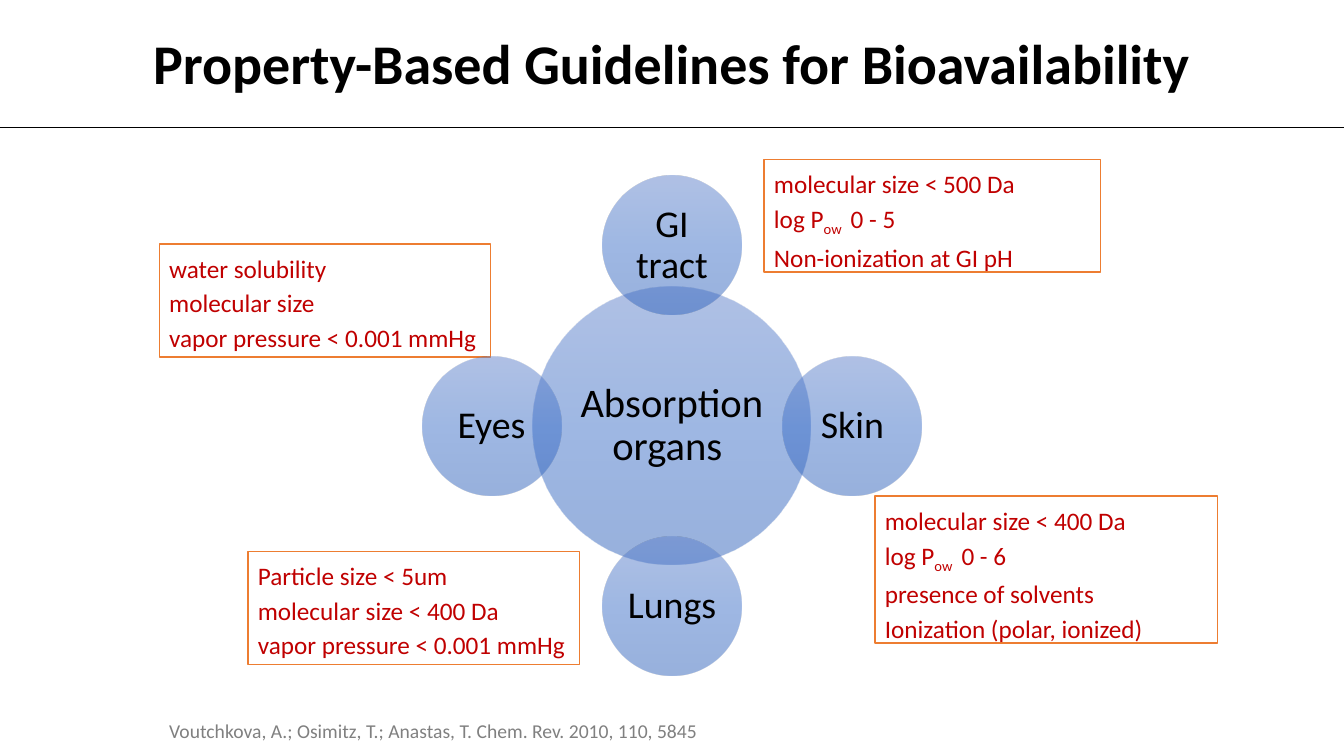
"""Build the slide on property-based guidelines for bioavailability."""
from dataclasses import dataclass

from lxml.etree import SubElement
from pptx import Presentation
from pptx.dml.color import RGBColor
from pptx.enum.shapes import MSO_CONNECTOR, MSO_SHAPE
from pptx.enum.text import MSO_ANCHOR, MSO_AUTO_SIZE, PP_ALIGN
from pptx.oxml.ns import qn
from pptx.shapes.autoshape import Shape
from pptx.slide import Slide
from pptx.text.text import _Paragraph as Paragraph
from pptx.util import Inches, Pt

COLUMNS = 160
CELL = Inches(13.333) / COLUMNS
FONT = "Calibri"
BLACK = RGBColor(0x00, 0x00, 0x00)
WHITE = RGBColor(0xFF, 0xFF, 0xFF)
GRAY = RGBColor(0x80, 0x80, 0x80)
RED = RGBColor(0xC0, 0x00, 0x00)
ORANGE = RGBColor(0xED, 0x7D, 0x31)
BUBBLE_STOPS = (
    (0, RGBColor(0x61, 0x83, 0xCB)),
    (50, RGBColor(0x3E, 0x70, 0xCA)),
    (100, RGBColor(0x30, 0x62, 0xBB)),
)
BUBBLE_OPACITY = 50
SUBSCRIPT_MARK = "|"

HUB_COLUMN, HUB_ROW = 80, 50.7
HUB_DIAMETER, ORGAN_DIAMETER = 33.06, 16.53
ORBIT = 21.48


@dataclass(frozen=True)
class Area:
    column: float
    row: float
    columns: float
    rows: float

    def box(self) -> tuple[int, int, int, int]:
        return tuple(cells(n) for n in (self.column, self.row, self.columns, self.rows))


@dataclass(frozen=True)
class Guideline:
    area: Area
    lines: tuple[str, ...]


@dataclass(frozen=True)
class Bubble:
    label: str
    right: int
    down: int
    diameter: float = ORGAN_DIAMETER
    size: int = 27

    def area(self) -> Area:
        radius = self.diameter / 2
        return Area(HUB_COLUMN + self.right * ORBIT - radius,
                    HUB_ROW + self.down * ORBIT - radius, self.diameter, self.diameter)


TITLE_AREA = Area(16.32, 2.76, 127.2, 9.24)
CITATION_AREA = Area(18.96, 84.96, 96, 4.08)
RULE_ROW = 15.12

GUIDELINES = (
    Guideline(Area(104.16, 59.04, 40.8, 17.52),
              ("molecular size < 400 Da", "log P|ow | 0 - 6",
               "presence of solvents", "Ionization (polar, ionized)")),
    Guideline(Area(90.96, 18.96, 40.08, 13.44),
              ("molecular size < 500 Da", "log P|ow | 0 - 5", "Non-ionization at GI pH")),
    Guideline(Area(29.52, 65.64, 39.48, 13.44),
              ("Particle size < 5um", "molecular size < 400 Da", "vapor pressure < 0.001 mmHg")),
    Guideline(Area(18.96, 29.04, 39.48, 13.44),
              ("water solubility", "molecular size", "vapor pressure < 0.001 mmHg")),
)

BUBBLES = (
    Bubble("Absorption organs ", 0, 0, HUB_DIAMETER, 29),
    Bubble("GI tract", 0, -1),
    Bubble("Skin", 1, 0),
    Bubble("Lungs", 0, 1),
    Bubble("Eyes", -1, 0),
)


def cells(count: float) -> int:
    return round(count * CELL)


def style(paragraph: Paragraph, size: int, color: RGBColor,
          align: PP_ALIGN = PP_ALIGN.LEFT, bold: bool = False) -> None:
    paragraph.alignment = align
    font = paragraph.font
    font.name, font.size, font.bold = FONT, Pt(size), bold
    font.color.rgb = color


def add_label(slide: Slide, area: Area, text: str, wrap: bool) -> Paragraph:
    frame = slide.shapes.add_textbox(*area.box()).text_frame
    frame.word_wrap = wrap
    frame.auto_size = MSO_AUTO_SIZE.SHAPE_TO_FIT_TEXT
    paragraph = frame.paragraphs[0]
    paragraph.add_run().text = text
    return paragraph


def add_rule(slide: Slide) -> None:
    height = cells(RULE_ROW)
    rule = slide.shapes.add_connector(MSO_CONNECTOR.STRAIGHT, 0, height, cells(COLUMNS), height)
    rule.line.color.rgb = BLACK
    rule.line.width = Pt(0.5)
    SubElement(rule._element.spPr, qn("a:effectLst"))


def add_guideline(slide: Slide, guideline: Guideline) -> None:
    shape = slide.shapes.add_shape(MSO_SHAPE.RECTANGLE, *guideline.area.box())
    shape.shadow.inherit = False
    shape.fill.solid()
    shape.fill.fore_color.rgb = WHITE
    shape.line.color.rgb = ORANGE
    shape.line.width = Pt(1)
    frame = shape.text_frame
    frame.word_wrap = True
    frame.auto_size = MSO_AUTO_SIZE.SHAPE_TO_FIT_TEXT
    frame.vertical_anchor = MSO_ANCHOR.TOP
    for number, line in enumerate(guideline.lines):
        paragraph = frame.add_paragraph() if number else frame.paragraphs[0]
        paragraph.line_spacing = 1.14
        style(paragraph, 18, RED)
        for part, text in enumerate(line.split(SUBSCRIPT_MARK)):
            run = paragraph.add_run()
            run.text = text
            if part % 2:
                run._r.get_or_add_rPr().set("baseline", "-25000")


def fill_bubble(shape: Shape) -> None:
    shape.fill.gradient()
    shape.fill.gradient_angle = 270
    stops = shape._element.spPr.find(".//" + qn("a:gsLst"))
    stops.clear()
    for position, color in BUBBLE_STOPS:
        stop = SubElement(stops, qn("a:gs"), pos=str(position * 1000))
        tint = SubElement(stop, qn("a:srgbClr"), val=str(color))
        SubElement(tint, qn("a:alpha"), val=str(BUBBLE_OPACITY * 1000))


def add_bubble(slide: Slide, bubble: Bubble) -> None:
    shape = slide.shapes.add_shape(MSO_SHAPE.OVAL, *bubble.area().box())
    shape.shadow.inherit = False
    shape.line.fill.background()
    fill_bubble(shape)
    frame = shape.text_frame
    frame.word_wrap = True
    frame.vertical_anchor = MSO_ANCHOR.MIDDLE
    frame.margin_left = frame.margin_right = Inches(0.04)
    frame.margin_top = frame.margin_bottom = Inches(0.04)
    paragraph = frame.paragraphs[0]
    paragraph.line_spacing = 0.9
    style(paragraph, bubble.size, BLACK, PP_ALIGN.CENTER)
    paragraph.add_run().text = bubble.label


def main() -> None:
    presentation = Presentation()
    presentation.slide_width, presentation.slide_height = Inches(13.333), Inches(7.5)
    slide = presentation.slides.add_slide(presentation.slide_layouts[6])
    for guideline in GUIDELINES:
        add_guideline(slide, guideline)
    citation = add_label(slide, CITATION_AREA,
                         "Voutchkova, A.; Osimitz, T.; Anastas, T. Chem. Rev. 2010, 110, 5845", True)
    style(citation, 14, GRAY)
    add_rule(slide)
    title = add_label(slide, TITLE_AREA, "Property-Based Guidelines for Bioavailability", False)
    style(title, 40, BLACK, PP_ALIGN.CENTER, bold=True)
    for bubble in BUBBLES:
        add_bubble(slide, bubble)
    presentation.save("out.pptx")


if __name__ == "__main__":
    main()
